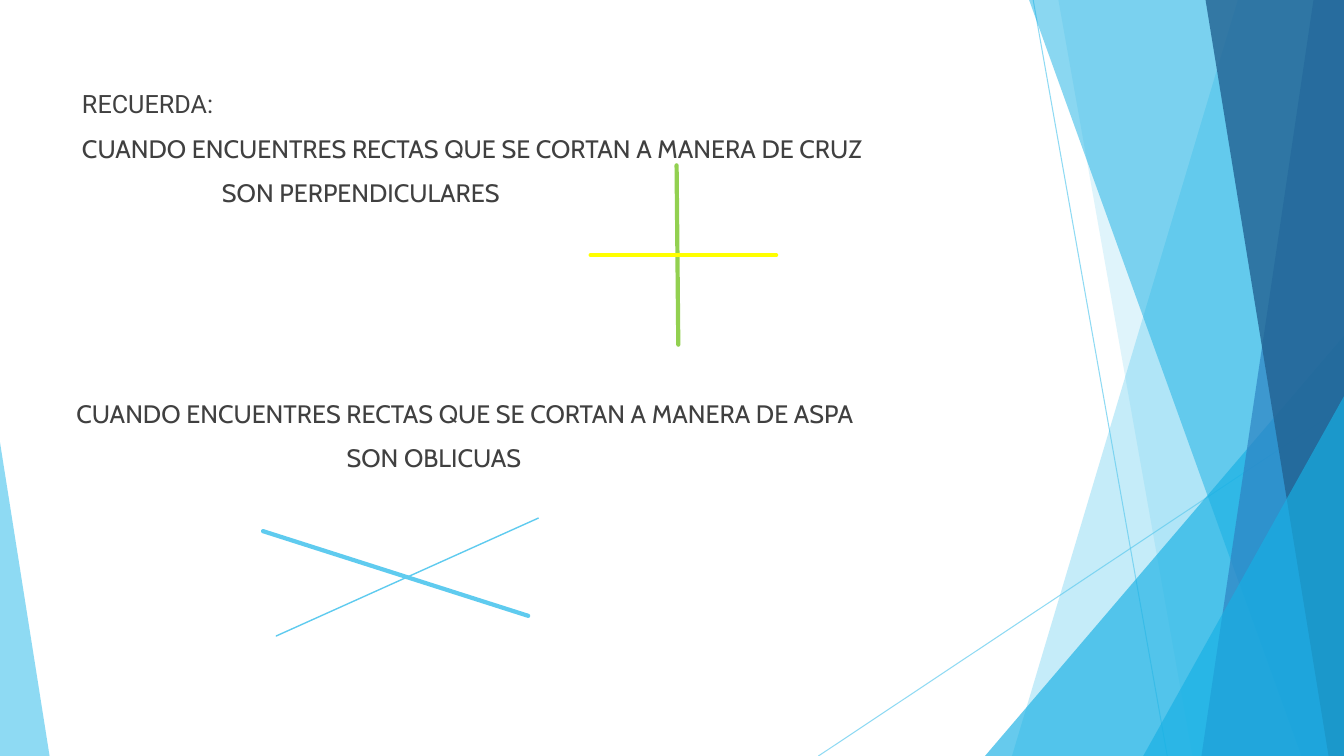
from dataclasses import dataclass

import pptx
import pptx.dml.color
import pptx.enum.shapes
import pptx.enum.text
import pptx.oxml
import pptx.oxml.ns
import pptx.util

Pt = pptx.util.Pt
WIDE, HIGH = 960, 540


@dataclass
class Facet:
    """Band from the right edge to a slanted left side."""
    top: float
    foot: float
    color: str
    alpha: int


@dataclass
class Wedge:
    """Triangle on the slide's foot, its tip at a share of its width."""
    left: float
    top: float
    width: float
    tip: float
    color: str
    alpha: int


@dataclass
class Stroke:
    start: tuple[float, float]
    end: tuple[float, float]
    color: str
    weight: float
    alpha: int = 100


@dataclass
class Phrase:
    text: str
    indent: float
    before: float
    font: str = "Cabin"


RAYS = [
    Stroke((738, 0), (833.8, HIGH), "5FCBEF", 0.75, 70),
    Stroke((WIDE, 290.2), (584.6, HIGH), "5FCBEF", 0.75, 70),
]
PANELS = [
    Facet(884.2, 722.9, "5FCBEF", 36),
    Facet(756, 851.8, "5FCBEF", 20),
    Wedge(703.6, 239.8, 256.4, 1, "17B0E4", 66),
    Facet(735.1, 929.5, "17B0E4", 50),
    Facet(938.2, 858.2, "2E83C3", 70),
    Facet(861.1, 949, "226292", 80),
    Wedge(816.6, 283, 143.4, 1, "17B0E4", 66),
    Wedge(0, 316, 35.4, 0, "5FCBEF", 70),
]
PHRASES = [
    Phrase("RECUERDA:", 4, 0, "Roboto"),
    Phrase("CUANDO ENCUENTRES RECTAS QUE SE CORTAN A MANERA DE CRUZ", 4, 10),
    Phrase("SON PERPENDICULARES", 104, 10),
    Phrase("CUANDO ENCUENTRES RECTAS QUE SE CORTAN A MANERA DE ASPA", 0, 136),
    Phrase("SON OBLICUAS", 193, 10),
]
CROSSES = [
    Stroke((483.3, 118.1), (484.5, 246.2), "92D050", 3),
    Stroke((421.9, 182.2), (554.4, 182.2), "FFFF00", 3),
    Stroke((187.9, 379.4), (377.3, 439.9), "5FCBEF", 3),
    Stroke((197.3, 454.3), (384.5, 370.1), "5FCBEF", 1),
]


def paint(color, code: str) -> None:
    color.rgb = pptx.dml.color.RGBColor.from_string(code)


def fade(shape, alpha: int) -> None:
    if alpha < 100:
        for node in shape.element.spPr.xpath(".//a:srgbClr"):
            mark = pptx.oxml.parse_xml(
                f'<a:alpha {pptx.oxml.ns.nsdecls("a")} val="{alpha * 1000}"/>')
            node.append(mark)


def draw_stroke(slide, item: Stroke) -> None:
    ends = [Pt(value) for value in (*item.start, *item.end)]
    line = slide.shapes.add_connector(
        pptx.enum.shapes.MSO_CONNECTOR.STRAIGHT, *ends)
    line.line.width = Pt(item.weight)
    paint(line.line.color, item.color)
    props = line.element.spPr
    props.xpath("a:ln")[0].set("cap", "rnd")
    props.append(pptx.oxml.parse_xml(
        f'<a:effectLst {pptx.oxml.ns.nsdecls("a")}/>'))
    fade(line, item.alpha)


def draw_panel(slide, item: Facet | Wedge) -> None:
    if isinstance(item, Wedge):
        shape = slide.shapes.add_shape(
            pptx.enum.shapes.MSO_SHAPE.ISOSCELES_TRIANGLE,
            Pt(item.left), Pt(item.top), Pt(item.width), Pt(HIGH - item.top))
        shape.adjustments[0] = item.tip
    else:
        pen = slide.shapes.build_freeform(Pt(item.top), 0)
        pen.add_line_segments([
            (Pt(WIDE), 0), (Pt(WIDE), Pt(HIGH)), (Pt(item.foot), Pt(HIGH))])
        shape = pen.convert_to_shape()
    shape.shadow.inherit = False
    shape.line.fill.background()
    shape.fill.solid()
    paint(shape.fill.fore_color, item.color)
    fade(shape, item.alpha)


def write_text(slide, items: list[Phrase]) -> None:
    box = slide.shapes.add_textbox(Pt(47.5), Pt(59.8), Pt(872), Pt(438.5))
    frame = box.text_frame
    frame.word_wrap = True
    frame.vertical_anchor = pptx.enum.text.MSO_ANCHOR.TOP
    for index, item in enumerate(items):
        para = frame.add_paragraph() if index else frame.paragraphs[0]
        para.text = item.text
        para.space_before = Pt(item.before)
        props = para._p.get_or_add_pPr()
        props.set("marL", str(Pt(item.indent)))
        props.set("indent", "0")
        para.font.name = item.font
        para.font.size = Pt(18)
        paint(para.font.color, "404040")


def main() -> None:
    deck = pptx.Presentation()
    deck.slide_width, deck.slide_height = Pt(WIDE), Pt(HIGH)
    slide = deck.slides.add_slide(deck.slide_layouts[6])

    # Backdrop
    for ray in RAYS:
        draw_stroke(slide, ray)
    for panel in PANELS:
        draw_panel(slide, panel)

    # Rules and their crossing lines
    write_text(slide, PHRASES)
    for stroke in CROSSES:
        draw_stroke(slide, stroke)

    deck.save("out.pptx")


if __name__ == "__main__":
    main()
